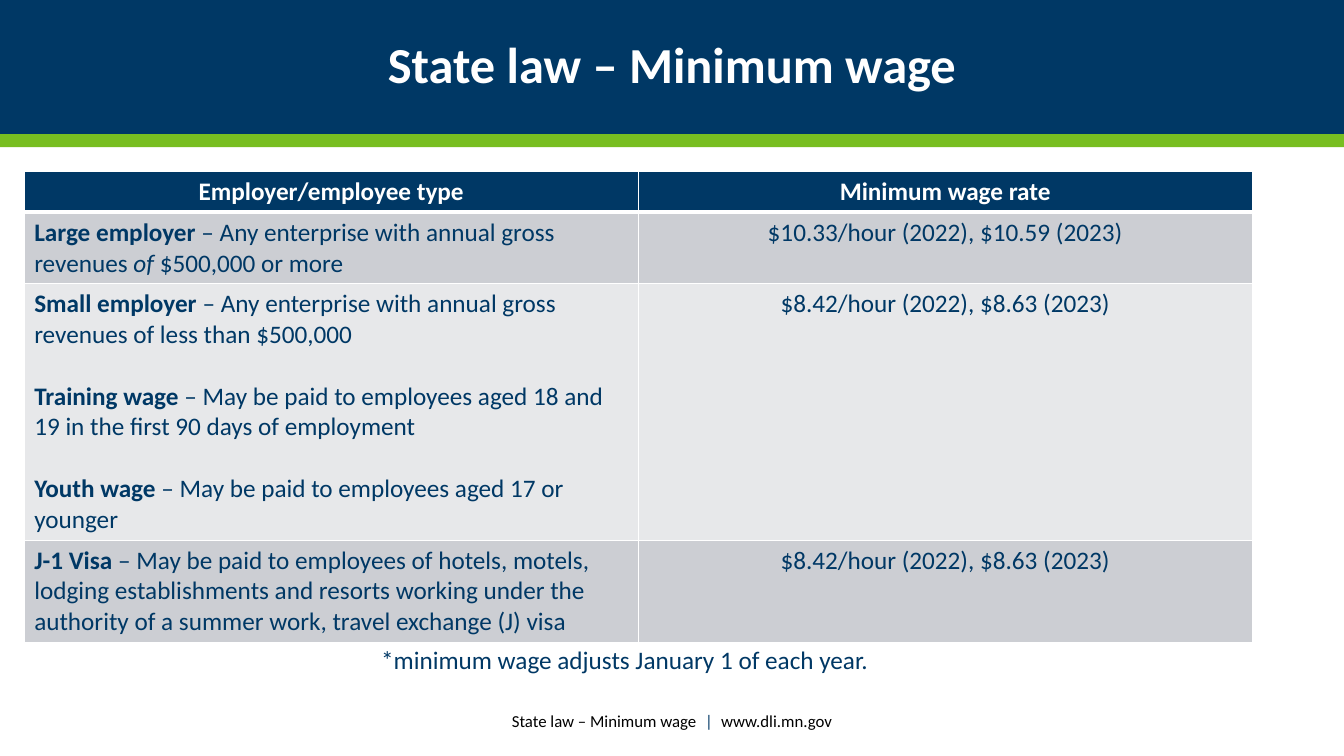
import pptx
import pptx.oxml
import pptx.util
from pptx.dml.color import RGBColor
from pptx.enum.shapes import MSO_SHAPE
from pptx.enum.text import MSO_ANCHOR, MSO_AUTO_SIZE, PP_ALIGN
from pptx.oxml.ns import nsdecls
from pptx.util import Inches, Pt

# Content: a paragraph is a list of (text, format) spans
COLORS = {"navy": "003865", "green": "78BE21", "white": "FFFFFF",
          "black": "000000", "band": "CCCED3", "pale": "E7E8EA"}
BOLD, ITALIC, PLAIN = {"bold": True}, {"italic": True}, {}
TITLE = "State law – Minimum wage"
NOTE = "*minimum wage adjusts January 1 of each year."
FOOTER = [("State law – Minimum wage\u2002", "black"), ("|", "navy"),
          ("\u2002www.dli.mn.gov", "black")]
HEADERS = ["Employer/employee type", "Minimum wage rate"]
WAGES = [
    ([[("Large employer ", BOLD),
       ("– Any enterprise with annual gross revenues ", PLAIN),
       ("of", ITALIC), (" $500,000 or more", PLAIN)]],
     "$10.33/hour (2022), $10.59 (2023)"),
    ([[("Small employer ", BOLD),
       ("– Any enterprise with annual gross revenues of less than $500,000", PLAIN)],
      [("Training wage ", BOLD),
       ("– May be paid to employees aged 18 and 19 in the first 90 days of employment", PLAIN)],
      [("Youth wage ", BOLD),
       ("– May be paid to employees aged 17 or younger", PLAIN)]],
     "$8.42/hour (2022), $8.63 (2023)"),
    ([[("J-1 Visa ", BOLD),
       ("– May be paid to employees of hotels, motels, lodging establishments and resorts "
        "working under the authority of a summer work, travel exchange (J) visa", PLAIN)]],
     "$8.42/hour (2022), $8.63 (2023)"),
]
ROW_HEIGHTS = [0.4, 0.7, 2.5, 1.0]
COLUMN_WIDTH = 6.09
PAGE_WIDTH, TITLE_HEIGHT = 13.33, 1.33


def add_span(para, text, size, color, formats=PLAIN):
    span = para.add_run()
    span.text = text
    settings = {"name": "Calibri", "size": Pt(size), "bold": False, "italic": False, **formats}
    for name, value in settings.items():
        setattr(span.font, name, value)
    span.font.color.rgb = RGBColor.from_string(COLORS[color])


def paint(fill, color):
    fill.solid()
    fill.fore_color.rgb = RGBColor.from_string(COLORS[color])


def add_centered_text(page, left, top, width, spans, size, anchor):
    box = page.shapes.add_textbox(Inches(left), Inches(top), Inches(width), Inches(0.4))
    box.text_frame.word_wrap = True
    box.text_frame.vertical_anchor = anchor
    para = box.text_frame.paragraphs[0]
    para.alignment = PP_ALIGN.CENTER
    for text, color in spans:
        add_span(para, text, size, color)


def fill_cell(cell, paragraphs, fill, color, borders, alignment):
    properties = cell._tc.get_or_add_tcPr()
    for side, points in borders.items():
        properties.append(pptx.oxml.parse_xml(
            f'<a:ln{side} {nsdecls("a")} w="{Pt(points)}"><a:solidFill>'
            f'<a:srgbClr val="{COLORS["white"]}"/></a:solidFill></a:ln{side}>'))
    paint(cell.fill, fill)
    frame = cell.text_frame
    for index, spans in enumerate(paragraphs):
        para = frame.add_paragraph() if index else frame.paragraphs[0]
        para.alignment = alignment
        if index:
            para.space_before = Pt(22)
        for text, formats in spans:
            add_span(para, text, 18, color, formats)


def main():
    deck = pptx.Presentation()
    deck.slide_width, deck.slide_height = Inches(PAGE_WIDTH), Inches(7.5)
    page = deck.slides.add_slide(deck.slide_layouts[5])

    # Title band and green rule
    title = page.shapes.title
    title.left, title.top = Inches(0), Inches(0)
    title.width, title.height = Inches(PAGE_WIDTH), Inches(TITLE_HEIGHT)
    paint(title.fill, "navy")
    frame = title.text_frame
    for name, value in {"margin_left": Inches(0.9), "margin_right": Inches(0.9),
                        "vertical_anchor": MSO_ANCHOR.MIDDLE, "word_wrap": True,
                        "auto_size": MSO_AUTO_SIZE.NONE}.items():
        setattr(frame, name, value)
    para = frame.paragraphs[0]
    para.alignment, para.line_spacing = PP_ALIGN.CENTER, 0.9
    add_span(para, TITLE, 36, "white", BOLD)

    rule = page.shapes.add_shape(MSO_SHAPE.RECTANGLE, Inches(0), Inches(TITLE_HEIGHT),
                                 Inches(PAGE_WIDTH), Inches(0.13))
    rule.shadow.inherit = False
    paint(rule.fill, "green")
    rule.line.fill.background()

    # Wage table
    table = page.shapes.add_table(
        len(ROW_HEIGHTS), len(HEADERS), Inches(0.24), Inches(1.7),
        Inches(COLUMN_WIDTH * len(HEADERS)), Inches(sum(ROW_HEIGHTS))).table
    for column in table.columns:
        column.width = Inches(COLUMN_WIDTH)
    for row, height in zip(table.rows, ROW_HEIGHTS):
        row.height = Inches(height)
    for column, header in enumerate(HEADERS):
        fill_cell(table.cell(0, column), [[(header, BOLD)]], "navy", "white",
                  {"L": 1, "R": 1, "T": 1, "B": 3}, PP_ALIGN.CENTER)
    for row, (kind, rate) in enumerate(WAGES, start=1):
        fill = "band" if row % 2 else "pale"
        borders = {"L": 1, "R": 1, "T": 3 if row == 1 else 1, "B": 1}
        fill_cell(table.cell(row, 0), kind, fill, "navy", borders, PP_ALIGN.LEFT)
        fill_cell(table.cell(row, 1), [[(rate, PLAIN)]], fill, "navy", borders, PP_ALIGN.CENTER)

    # Note and footer
    add_centered_text(page, 2.32, 6.34, 7.75, [(NOTE, "navy")], 18, MSO_ANCHOR.TOP)
    add_centered_text(page, 3.61, 6.95, 6.11, FOOTER, 12, MSO_ANCHOR.MIDDLE)

    deck.save("out.pptx")


if __name__ == "__main__":
    main()
